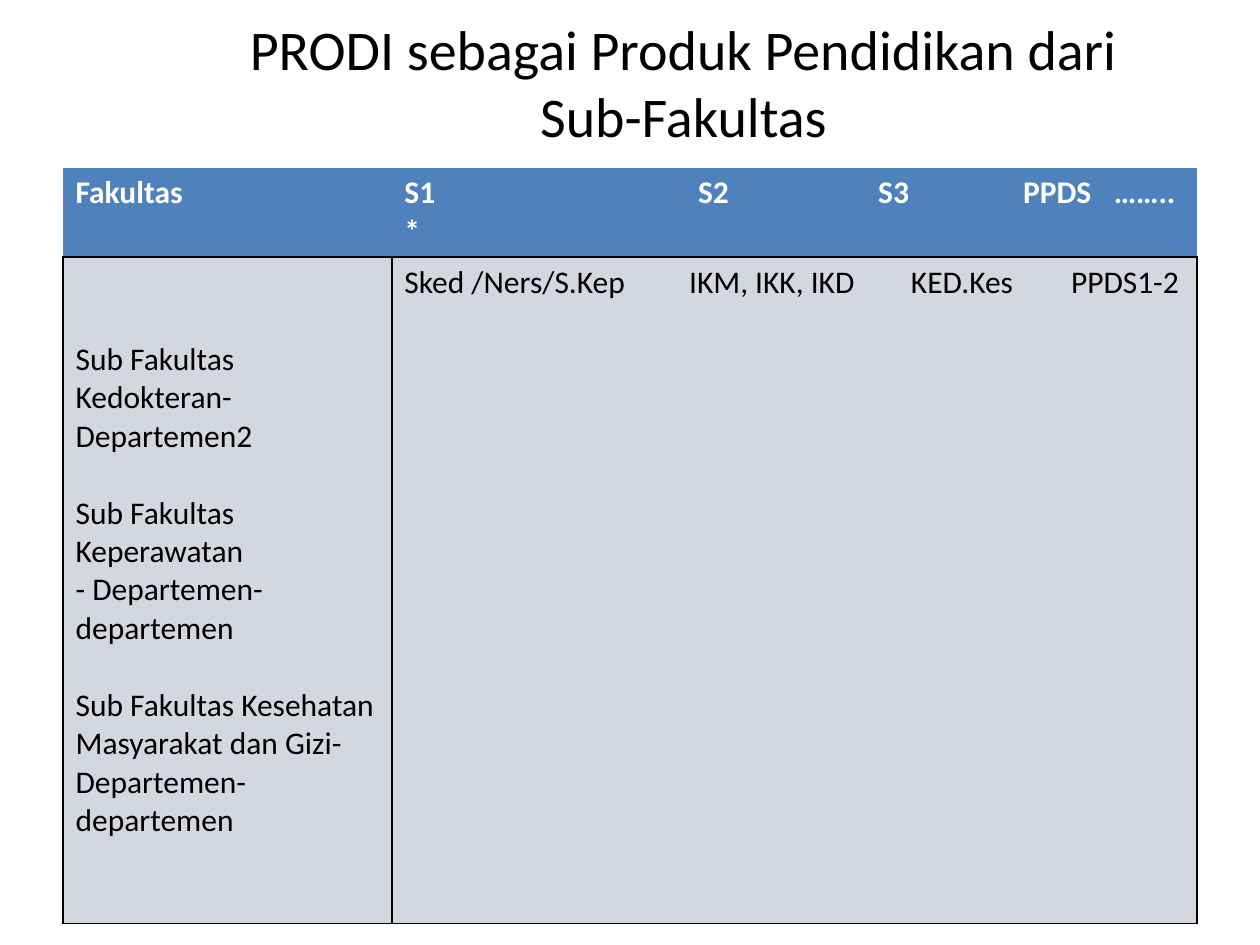
import dataclasses

import lxml.etree
import pptx
import pptx.dml.color
import pptx.enum.text
import pptx.oxml.ns
import pptx.util


@dataclasses.dataclass(frozen=True)
class Theme:
    font: str = "Calibri"
    ink: str = "000000"
    paper: str = "FFFFFF"
    header: str = "4F81BD"
    body: str = "D5D7E0"
    title_size: float = 32
    table_size: float = 18
    gap: float = 22
    border: float = 1


def rgb(value):
    return pptx.dml.color.RGBColor.from_string(value)


def child(parent, tag, **attributes):
    values = {key: str(value) for key, value in attributes.items()}
    return lxml.etree.SubElement(parent, pptx.oxml.ns.qn(tag), values)


def write_text(frame, lines, *, font, size, color, bold=False, align=None,
               indent=0, gaps=(), gap=0, tabs=()):
    for index, line in enumerate(lines):
        paragraph = frame.paragraphs[0] if index == 0 else frame.add_paragraph()
        run = paragraph.add_run()
        run.text = line
        run.font.name, run.font.size = font, pptx.util.Pt(size)
        run.font.bold, run.font.color.rgb = bold, rgb(color)
        paragraph.alignment = align
        if index in gaps:
            paragraph.space_before = pptx.util.Pt(gap)
        properties = paragraph._p.get_or_add_pPr()
        if indent and index == 0:
            properties.set("marL", str(pptx.util.Inches(indent)))
            properties.set("indent", "0")
        if tabs and "\t" in line:
            stops = child(properties, "a:tabLst")
            for stop in tabs:
                child(stops, "a:tab", pos=pptx.util.Inches(stop), algn="l")


class SlideBuilder:
    """Places themed elements on a slide with a grid of 100 columns by 75 rows."""

    def __init__(self, deck, theme):
        self.theme = theme
        self.column = deck.slide_width / 100
        self.row = deck.slide_height / 75
        self.slide = deck.slides.add_slide(deck.slide_layouts[5])

    def box(self, left, top, width, height):
        return (round(left * self.column), round(top * self.row),
                round(width * self.column), round(height * self.row))

    def title(self, lines, area, indent):
        heading = self.slide.shapes.title
        heading.left, heading.top, heading.width, heading.height = self.box(*area)
        frame = heading.text_frame
        frame.word_wrap = True
        frame.auto_size = pptx.enum.text.MSO_AUTO_SIZE.NONE
        frame.vertical_anchor = pptx.enum.text.MSO_ANCHOR.MIDDLE
        write_text(frame, lines, font=self.theme.font, size=self.theme.title_size,
                   color=self.theme.ink, indent=indent,
                   align=pptx.enum.text.PP_ALIGN.CENTER)

    def table(self, area, columns, rows):
        table = self.slide.shapes.add_table(len(rows), len(columns), *self.box(*area)).table
        table.first_row = table.horz_banding = False
        for column, width in zip(table.columns, columns):
            column.width = round(width * self.column)
        for row, (height, _) in zip(table.rows, rows):
            row.height = round(height * self.row)
        return table

    def cell(self, cell, lines, *, header=False, top=0.05, **text_format):
        theme = self.theme
        cell.margin_top = pptx.util.Inches(top)
        cell.fill.solid()
        cell.fill.fore_color.rgb = rgb(theme.header if header else theme.body)
        self.borders(cell, "B" if header else "LRTB")
        write_text(cell.text_frame, lines, font=theme.font, size=theme.table_size,
                   color=theme.paper if header else theme.ink, bold=header,
                   **text_format)

    def borders(self, cell, visible):
        properties = cell._tc.get_or_add_tcPr()
        for position, side in enumerate("LRTB"):
            line = child(properties, f"a:ln{side}", w=pptx.util.Pt(self.theme.border))
            if side in visible:
                child(child(line, "a:solidFill"), "a:srgbClr", val=self.theme.ink)
            else:
                child(line, "a:noFill")
            properties.insert(position, line)


def main():
    deck = pptx.Presentation()
    deck.slide_width, deck.slide_height = pptx.util.Inches(10), pptx.util.Inches(7.5)
    theme = Theme()
    builder = SlideBuilder(deck, theme)
    builder.title(["PRODI sebagai Produk Pendidikan dari", "Sub-Fakultas"],
                  (2, 3, 93.7, 7), indent=1.08)

    degrees = ["S1\tS2\tS3\tPPDS\t……..", "*"]
    programmes = ["Sked /Ners/S.Kep\tIKM, IKK, IKD\tKED.Kes\tPPDS1-2"]
    faculties = ["Sub Fakultas Kedokteran- Departemen2",
                 "Sub Fakultas Keperawatan",
                 "- Departemen-departemen",
                 "Sub Fakultas Kesehatan Masyarakat dan Gizi- Departemen-departemen"]
    rows = [
        (7.1, [(["Fakultas"], dict(header=True)),
               (degrees, dict(header=True, tabs=(2.33, 3.76, 4.91, 5.63)))]),
        (52.9, [(faculties, dict(top=0.66, gaps=(1, 3), gap=theme.gap)),
                (programmes, dict(tabs=(2.26, 4.02, 5.29)))]),
    ]
    table = builder.table((5, 13.3, 90, 60), (26.1, 63.9), rows)
    for row_index, (_, entries) in enumerate(rows):
        for column_index, (lines, options) in enumerate(entries):
            builder.cell(table.cell(row_index, column_index), lines, **options)
    deck.save("out.pptx")


if __name__ == "__main__":
    main()
